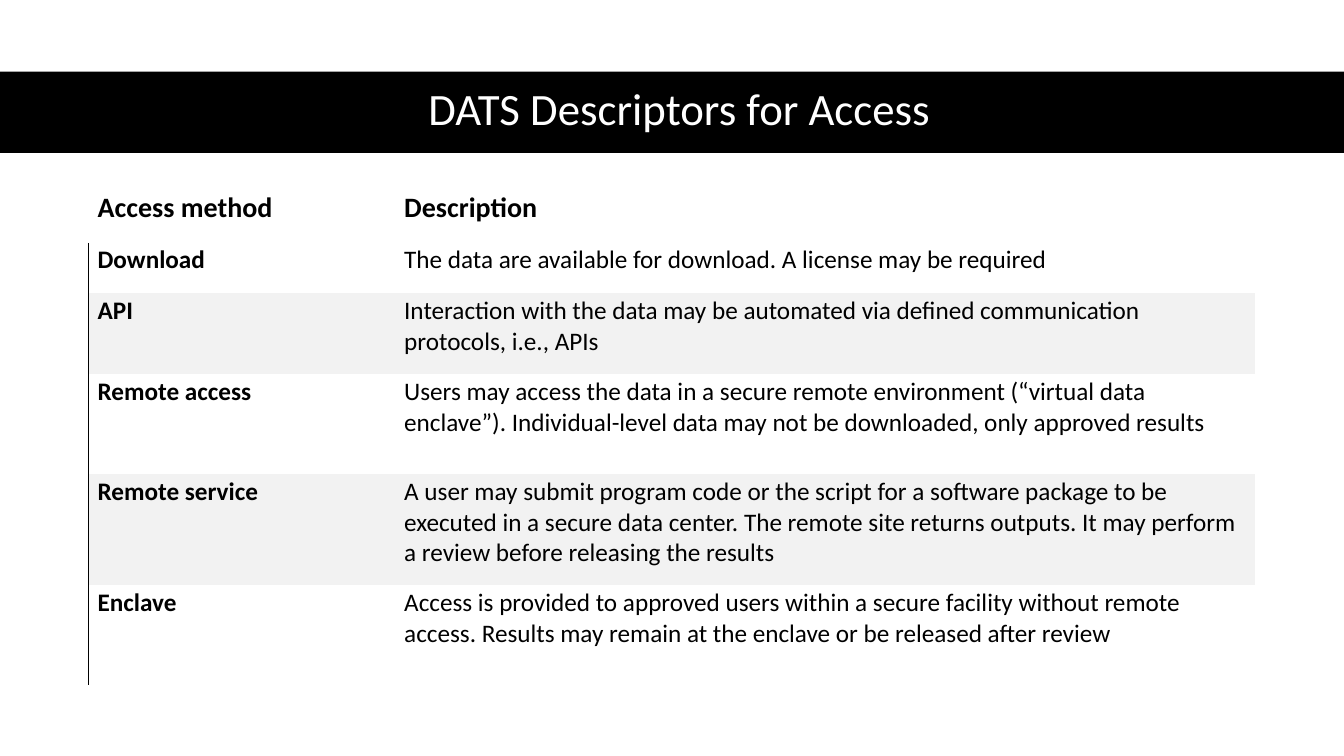
from dataclasses import dataclass

from lxml import etree
from pptx import Presentation
from pptx.dml.color import RGBColor
from pptx.enum.shapes import MSO_SHAPE
from pptx.enum.text import MSO_ANCHOR, PP_ALIGN
from pptx.oxml.ns import qn
from pptx.util import Pt

RECTANGLE = MSO_SHAPE.RECTANGLE
TOP, MIDDLE, BOTTOM = MSO_ANCHOR.TOP, MSO_ANCHOR.MIDDLE, MSO_ANCHOR.BOTTOM
CENTER = PP_ALIGN.CENTER


@dataclass(frozen=True)
class Theme:
    """Colours, font and type sizes of the slide."""
    font: str = "Calibri"
    black: str = "000000"
    white: str = "FFFFFF"
    band: str = "F2F2F2"
    title_size: float = 32
    header_size: float = 20
    body_size: float = 18
    rule_width: float = 0.75


THEME = Theme()
SLIDE_WIDTH, SLIDE_HEIGHT = 960, 540
TITLE = "DATS Descriptors for Access"
COLUMN_WIDTHS = (219, 614.5)
ROW_HEIGHTS = (41.5, 36, 54, 71.5, 71.5, 71.5)
ACCESS_METHODS = (
    ("Access method", "Description"),
    ("Download", "The data are available for download. A license may be required"),
    ("API", "Interaction with the data may be automated via defined "
            "communication protocols, i.e., APIs"),
    ("Remote access", "Users may access the data in a secure remote environment "
                      "(“virtual data enclave”). Individual-level data may not be "
                      "downloaded, only approved results"),
    ("Remote service", "A user may submit program code or the script for a software "
                       "package to be executed in a secure data center. The remote "
                       "site returns outputs. It may perform a review before "
                       "releasing the results"),
    ("Enclave", "Access is provided to approved users within a secure facility "
                "without remote access. Results may remain at the enclave or be "
                "released after review"),
)


def add_run(paragraph, text, size, color, bold=False):
    """Add one styled run to a paragraph."""
    run = paragraph.add_run()
    run.text = text
    run.font.name = THEME.font
    run.font.size = Pt(size)
    run.font.bold = bold
    run.font.color.rgb = RGBColor.from_string(color)


def add_title_band(slide):
    """Add the full-width black band behind the title."""
    band = slide.shapes.add_shape(RECTANGLE, Pt(0), Pt(51.25), Pt(SLIDE_WIDTH), Pt(58))
    band.shadow.inherit = False
    band.fill.solid()
    band.fill.fore_color.rgb = RGBColor.from_string(THEME.black)
    band.line.fill.background()


def add_title(slide):
    """Add the centred slide title."""
    title = slide.shapes.add_textbox(Pt(44), Pt(50.5), Pt(882.5), Pt(58))
    frame = title.text_frame
    frame.word_wrap = True
    frame.vertical_anchor = MIDDLE
    paragraph = frame.paragraphs[0]
    paragraph.alignment = CENTER
    paragraph.line_spacing = 0.9
    add_run(paragraph, TITLE, THEME.title_size, THEME.white)


def set_borders(cell, ruled_left):
    """Clear the cell borders, keeping a black left rule on request."""
    properties = cell._tc.get_or_add_tcPr()
    for side in ("lnL", "lnR", "lnT", "lnB"):
        line = etree.SubElement(properties, qn(f"a:{side}"))
        if ruled_left and side == "lnL":
            line.set("w", str(Pt(THEME.rule_width)))
            fill = etree.SubElement(line, qn("a:solidFill"))
            etree.SubElement(fill, qn("a:srgbClr"), val=THEME.black)
        else:
            etree.SubElement(line, qn("a:noFill"))


def fill_cell(cell, text, row, column):
    """Style one table cell and write its text."""
    is_header = row == 0
    cell.margin_left = cell.margin_right = Pt(6.5)
    cell.margin_top, cell.margin_bottom = Pt(1.5), Pt(13)
    cell.vertical_anchor = BOTTOM if is_header else TOP
    set_borders(cell, ruled_left=column == 0 and not is_header)
    if row and row % 2 == 0:
        cell.fill.solid()
        cell.fill.fore_color.rgb = RGBColor.from_string(THEME.band)
    else:
        cell.fill.background()
    size = THEME.header_size if is_header else THEME.body_size
    add_run(cell.text_frame.paragraphs[0], text, size, THEME.black,
            bold=is_header or column == 0)


def add_access_table(slide):
    """Add the table of access methods."""
    frame = slide.shapes.add_table(
        len(ROW_HEIGHTS), len(COLUMN_WIDTHS), Pt(63.25), Pt(132),
        Pt(sum(COLUMN_WIDTHS)), Pt(sum(ROW_HEIGHTS)))
    table = frame.table
    table.first_row = table.horz_banding = False
    for column, width in zip(table.columns, COLUMN_WIDTHS):
        column.width = Pt(width)
    for row, height in zip(table.rows, ROW_HEIGHTS):
        row.height = Pt(height)
    for row, texts in enumerate(ACCESS_METHODS):
        for column, text in enumerate(texts):
            fill_cell(table.cell(row, column), text, row, column)


def main():
    """Build and save the slide."""
    presentation = Presentation()
    presentation.slide_width = Pt(SLIDE_WIDTH)
    presentation.slide_height = Pt(SLIDE_HEIGHT)
    slide = presentation.slides.add_slide(presentation.slide_layouts[6])
    add_title_band(slide)
    add_title(slide)
    add_access_table(slide)
    presentation.save("out.pptx")


if __name__ == "__main__":
    main()
